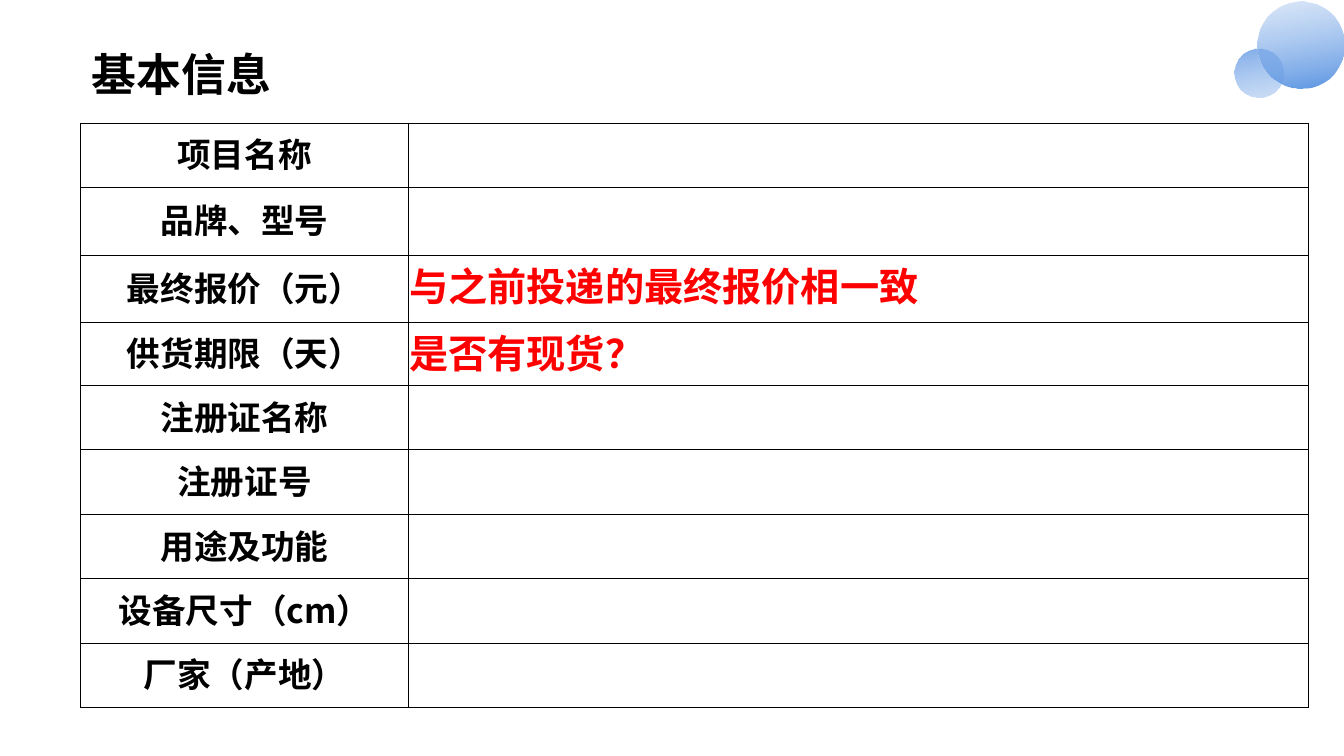
from lxml import etree
from pptx import Presentation
from pptx.dml.color import RGBColor
from pptx.enum import shapes, text
from pptx.oxml.ns import qn
from pptx.util import Inches, Pt

FONT = "Noto Sans CJK SC"
BLACK = RGBColor(0x00, 0x00, 0x00)
RED = RGBColor(0xFF, 0x00, 0x00)
PALE_BLUE = RGBColor(0xAD, 0xCA, 0xF1)
SOFT_BLUE = RGBColor(0x77, 0xA7, 0xE8)
DEEP_BLUE = RGBColor(0x4D, 0x8C, 0xE1)

# Label, value and row height
ROWS = [
    ("项目名称", "", 0.64),
    ("品牌、型号", "", 0.67),
    ("最终报价（元）", "与之前投递的最终报价相一致", 0.67),
    ("供货期限（天）", "是否有现货？", 0.6),
    ("注册证名称", "", 0.64),
    ("注册证号", "", 0.64),
    ("用途及功能", "", 0.64),
    ("设备尺寸（cm）", "", 0.64),
    ("厂家（产地）", "", 0.64),
]
COLUMN_WIDTHS = (3.25, 8.93)


def write_text(frame, content, size=24, color=BLACK, align=text.PP_ALIGN.LEFT):
    paragraph = frame.paragraphs[0]
    paragraph.alignment = align
    run = paragraph.add_run()
    run.text = content
    font = run.font
    font.name, font.size, font.bold = FONT, Pt(size), True
    font.color.rgb = color
    east_asian = etree.Element(qn("a:ea"), typeface=FONT)
    run._r.rPr.find(qn("a:latin")).addnext(east_asian)


class InfoSlide:
    def __init__(self, presentation):
        self.slide = presentation.slides.add_slide(presentation.slide_layouts[5])
        self.border_color = BLACK
        self.border_width = Pt(0.5)

    def title(self, content, left, top, width, height):
        title = self.slide.shapes.title
        title.left, title.top = Inches(left), Inches(top)
        title.width, title.height = Inches(width), Inches(height)
        frame = title.text_frame
        frame.auto_size = text.MSO_AUTO_SIZE.NONE
        frame.vertical_anchor = text.MSO_ANCHOR.MIDDLE
        write_text(frame, content, size=32)

    def circle(self, group, left, top, diameter, end_color, start_alpha, flipped=False):
        circle = group.shapes.add_shape(
            shapes.MSO_SHAPE.OVAL, Inches(left), Inches(top),
            Inches(diameter), Inches(diameter))
        circle.shadow.inherit = False
        circle.line.fill.background()
        circle.rotation = 35
        circle.fill.gradient()
        circle.fill.gradient_angle = 315
        for stop, color in zip(circle.fill.gradient_stops, (PALE_BLUE, end_color)):
            stop.color.rgb = color
        properties = circle._element.spPr
        start = properties.find(".//" + qn("a:srgbClr"))
        etree.SubElement(start, qn("a:alpha"), val=str(start_alpha * 1000))
        if flipped:
            properties.xfrm.set("flipH", "1")
            properties.xfrm.set("flipV", "1")

    def borders(self, cell):
        properties = cell._tc.get_or_add_tcPr()
        for position, side in enumerate(("lnL", "lnR", "lnT", "lnB")):
            line = etree.Element(qn("a:" + side), w=str(self.border_width))
            fill = etree.SubElement(line, qn("a:solidFill"))
            etree.SubElement(fill, qn("a:srgbClr"), val=str(self.border_color))
            properties.insert(position, line)

    def table(self, rows, widths, left, top):
        height = sum(row[2] for row in rows)
        table = self.slide.shapes.add_table(
            len(rows), len(widths), Inches(left), Inches(top),
            Inches(sum(widths)), Inches(height)).table
        table.first_row = table.horz_banding = False
        for column, width in zip(table.columns, widths):
            column.width = Inches(width)
        for row, (label, value, row_height) in zip(table.rows, rows):
            row.height = Inches(row_height)
            for cell in row.cells:
                cell.margin_left = cell.margin_right = cell.margin_top = Inches(0.01)
                cell.margin_bottom = Inches(0.05)
                cell.fill.background()
                self.borders(cell)
            label_cell, value_cell = row.cells
            label_cell.vertical_anchor = text.MSO_ANCHOR.MIDDLE
            write_text(label_cell.text_frame, label, align=text.PP_ALIGN.CENTER)
            if value:
                write_text(value_cell.text_frame, value, size=28, color=RED)


def main():
    presentation = Presentation()
    presentation.slide_width = Inches(13.33)
    presentation.slide_height = Inches(7.5)
    info = InfoSlide(presentation)

    # Corner decoration
    corner = info.slide.shapes.add_group_shape()
    info.circle(corner, 12.24, 0.48, 0.49, SOFT_BLUE, 55, flipped=True)
    info.circle(corner, 12.47, 0.02, 0.86, DEEP_BLUE, 39)

    # Heading and information table
    info.title("基本信息", 0.81, 0.41, 4.33, 0.64)
    info.table(ROWS, COLUMN_WIDTHS, 0.8, 1.22)

    presentation.save("out.pptx")


if __name__ == "__main__":
    main()
